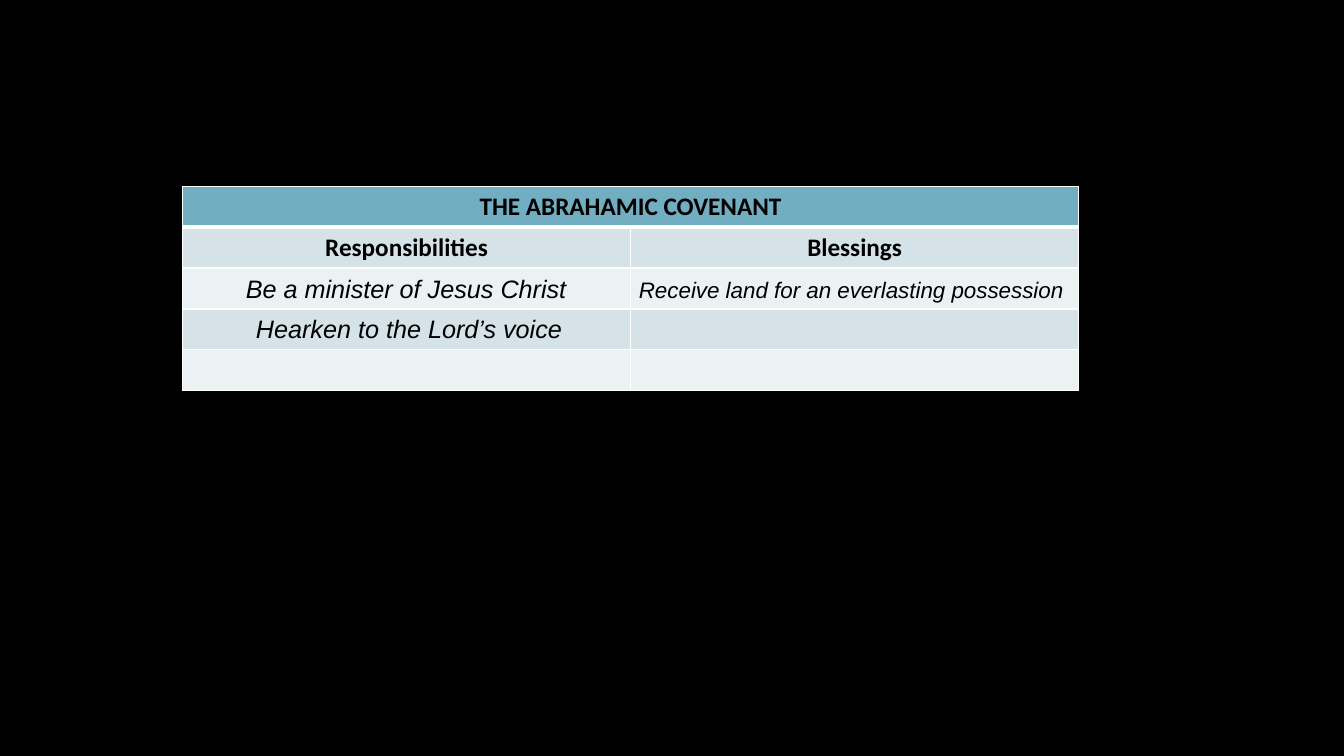
"""Build the Abrahamic Covenant table slide."""
from typing import NamedTuple

from lxml import etree
from pptx import Presentation
from pptx import util as u
from pptx.dml import color
from pptx.enum import text
from pptx.oxml import ns

COLORS = {"black": "000000", "white": "FFFFFF", "header": "71AEC1",
          "dark_band": "D5E3E9", "light_band": "EBF2F4"}
ROWS, COLS = 5, 2
COL_W, ROW_H = 320, 29.2


class Entry(NamedTuple):
    text: str
    left: float
    top: float
    width: float
    height: float
    size: float


class Heading(NamedTuple):
    text: str
    row: int
    col: int


ENTRIES = [
    Entry("Be a minister of\u00a0Jesus Christ", 168.5, 191.5, 245.5, 29, 18),
    Entry("Hearken to the Lord’s voice", 175.7, 220.3, 235.4, 29, 18),
    Entry("Receive land for an everlasting possession", 449.3, 193.7, 321, 26.7, 16),
]
HEADINGS = [
    Heading("THE ABRAHAMIC COVENANT", 0, 0),
    Heading("Responsibilities", 1, 0),
    Heading("Blessings", 1, 1),
]


def rgb(name: str) -> color.RGBColor:
    return color.RGBColor.from_string(COLORS[name])


def style(p, font: str, size: float, bold: bool = False, italic: bool = False) -> None:
    for r in p.runs:
        r.font.name = font
        r.font.size = u.Pt(size)
        r.font.bold = bold
        r.font.italic = italic
        r.font.color.rgb = rgb("black")


def add_borders(cell, top: float, bottom: float) -> None:
    tcPr = cell._tc.get_or_add_tcPr()
    sides = {"lnL": 1, "lnR": 1, "lnT": top, "lnB": bottom}
    for i, (side, width) in enumerate(sides.items()):
        ln = etree.Element(ns.qn(f"a:{side}"), w=str(u.Pt(width)))
        fill = etree.SubElement(ln, ns.qn("a:solidFill"))
        etree.SubElement(fill, ns.qn("a:srgbClr"), val=COLORS["white"])
        tcPr.insert(i, ln)


def add_covenant_table(s) -> None:
    table = s.shapes.add_table(ROWS, COLS, u.Pt(130.5), u.Pt(133.1),
                               u.Pt(COLS * COL_W), u.Pt(ROWS * ROW_H)).table
    for col in table.columns:
        col.width = u.Pt(COL_W)
    for i, row in enumerate(table.rows):
        row.height = u.Pt(ROW_H)
        band = "header" if i == 0 else "dark_band" if i % 2 else "light_band"
        for cell in row.cells:
            cell.fill.solid()
            cell.fill.fore_color.rgb = rgb(band)
            add_borders(cell, 3 if i == 1 else 1, 3 if i == 0 else 1)
    table.cell(0, 0).merge(table.cell(0, COLS - 1))
    for heading in HEADINGS:
        tf = table.cell(heading.row, heading.col).text_frame
        tf.text = heading.text
        p = tf.paragraphs[0]
        p.alignment = text.PP_ALIGN.CENTER
        style(p, "Calibri", 18, bold=True)


def add_entry(s, entry: Entry) -> None:
    sp = s.shapes.add_textbox(u.Pt(entry.left), u.Pt(entry.top),
                              u.Pt(entry.width), u.Pt(entry.height))
    tf = sp.text_frame
    tf.word_wrap = False
    tf.auto_size = text.MSO_AUTO_SIZE.SHAPE_TO_FIT_TEXT
    tf.text = entry.text
    style(tf.paragraphs[0], "Arial", entry.size, italic=True)


def main() -> None:
    prs = Presentation()
    prs.slide_width, prs.slide_height = u.Pt(960), u.Pt(540)
    s = prs.slides.add_slide(prs.slide_layouts[6])
    s.background.fill.solid()
    s.background.fill.fore_color.rgb = rgb("black")
    add_covenant_table(s)
    for entry in ENTRIES:
        add_entry(s, entry)
    prs.save("out.pptx")


if __name__ == "__main__":
    main()
